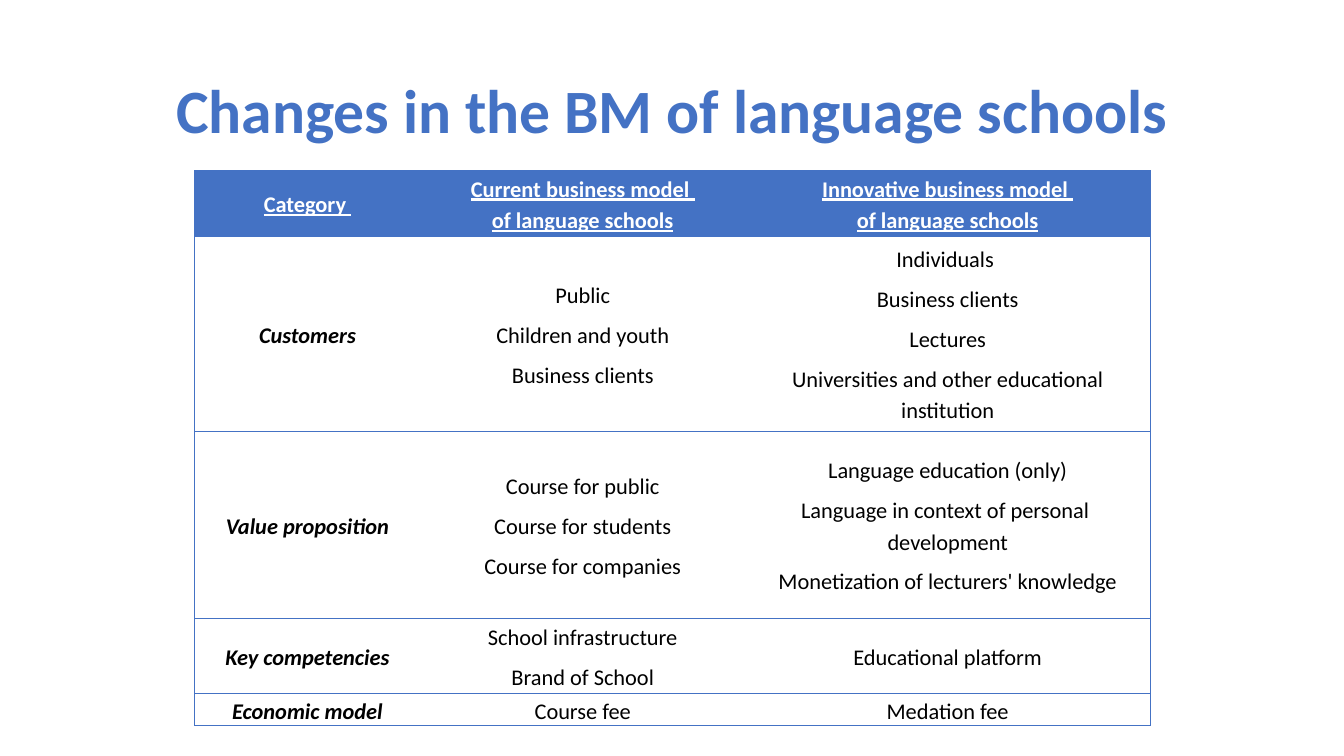
from copy import deepcopy

from lxml import etree
from pptx import Presentation
from pptx.dml.color import RGBColor
from pptx.enum.text import MSO_ANCHOR, PP_ALIGN
from pptx.oxml.ns import qn
from pptx.util import Inches, Pt

BLUE = RGBColor(0x44, 0x72, 0xC4)
WHITE = RGBColor(0xFF, 0xFF, 0xFF)
BLACK = RGBColor(0x00, 0x00, 0x00)
CENTER = PP_ALIGN.CENTER
MIDDLE = MSO_ANCHOR.MIDDLE

COLUMN_WIDTHS = [2.24, 3.22, 4.02]
ROW_HEIGHTS = [0.65, 1.94, 1.85, 0.75, 0.32]
# Each cell is a list of paragraphs; "\n" is a line break inside a paragraph.
ROWS = [
    [["Category "],
     ["Current business model \nof language schools"],
     ["Innovative business model \nof language schools"]],
    [["Customers"],
     ["Public", "Children and youth", "Business clients"],
     ["Individuals ", "Business clients", "Lectures",
      "Universities and other educational institution"]],
    [["Value proposition"],
     ["Course for public", "Course for students", "Course for companies"],
     ["Language education (only)",
      "Language in context of personal \ndevelopment",
      "Monetization of lecturers' knowledge"]],
    [["Key competencies"],
     ["School infrastructure", "Brand of School"],
     ["Educational platform"]],
    [["Economic model"], ["Course fee"], ["Medation fee"]],
]
HEADER_FORMAT = {"size": Pt(16), "bold": True, "italic": False, "underline": True}
CATEGORY_FORMAT = {"size": Pt(16), "bold": True, "italic": True, "underline": False}
BODY_FORMAT = {"size": Pt(16), "bold": False, "italic": False, "underline": False}
TITLE_FORMAT = {"size": Pt(44), "bold": True}


def write_paragraph(paragraph, text, font_format, color, line_spacing):
    """Fill a centred paragraph and give its runs and line breaks one format."""
    paragraph.text = text
    paragraph.alignment = CENTER
    paragraph.line_spacing = line_spacing
    for run in paragraph.runs:
        run.font.name = "Calibri"
        run.font.color.rgb = color
        for name, value in font_format.items():
            setattr(run.font, name, value)
    run_properties = paragraph.runs[0].font._element
    for line_break in paragraph._p.findall(qn("a:br")):
        line_break.insert(0, deepcopy(run_properties))


def set_borders(cell, visible_sides):
    """Draw the visible sides in blue and clear the others."""
    properties = cell._tc.get_or_add_tcPr()
    for position, side in enumerate("LRTB"):
        line = etree.Element(qn("a:ln" + side), w=str(Pt(0.5)))
        if side in visible_sides:
            fill = etree.SubElement(line, qn("a:solidFill"))
            etree.SubElement(fill, qn("a:srgbClr"), val=str(BLUE))
        else:
            etree.SubElement(line, qn("a:noFill"))
        properties.insert(position, line)


presentation = Presentation()
presentation.slide_width = Inches(13.33)
presentation.slide_height = Inches(7.5)
slide = presentation.slides.add_slide(presentation.slide_layouts[6])

title = slide.shapes.add_textbox(Inches(0.92), Inches(0.4), Inches(11.5), Inches(1.45))
title.text_frame.word_wrap = True
title.text_frame.vertical_anchor = MIDDLE
write_paragraph(title.text_frame.paragraphs[0],
                "Changes in the BM of language schools", TITLE_FORMAT, BLUE, 0.9)

table = slide.shapes.add_table(
    len(ROWS), len(COLUMN_WIDTHS), Inches(1.93), Inches(1.69),
    Inches(sum(COLUMN_WIDTHS)), Inches(sum(ROW_HEIGHTS))).table
table.first_row = True
table.horz_banding = False
for column, width in zip(table.columns, COLUMN_WIDTHS):
    column.width = Inches(width)
for row, height in zip(table.rows, ROW_HEIGHTS):
    row.height = Inches(height)

for row_index, row_texts in enumerate(ROWS):
    for column_index, texts in enumerate(row_texts):
        is_header = row_index == 0
        if is_header:
            font_format = HEADER_FORMAT
        elif column_index == 0:
            font_format = CATEGORY_FORMAT
        else:
            font_format = BODY_FORMAT

        cell = table.cell(row_index, column_index)
        cell.vertical_anchor = MIDDLE
        cell.margin_left = cell.margin_right = Inches(0.07)
        cell.margin_top = cell.margin_bottom = 0
        cell.fill.solid()
        cell.fill.fore_color.rgb = BLUE if is_header else WHITE
        outer_side = {0: "L", len(COLUMN_WIDTHS) - 1: "R"}.get(column_index, "")
        set_borders(cell, "TB" + outer_side)

        for index, text in enumerate(texts):
            frame = cell.text_frame
            paragraph = frame.add_paragraph() if index else frame.paragraphs[0]
            write_paragraph(paragraph, text, font_format,
                            WHITE if is_header else BLACK, 1.15)
            paragraph.space_after = Pt(6)

presentation.save("out.pptx")
